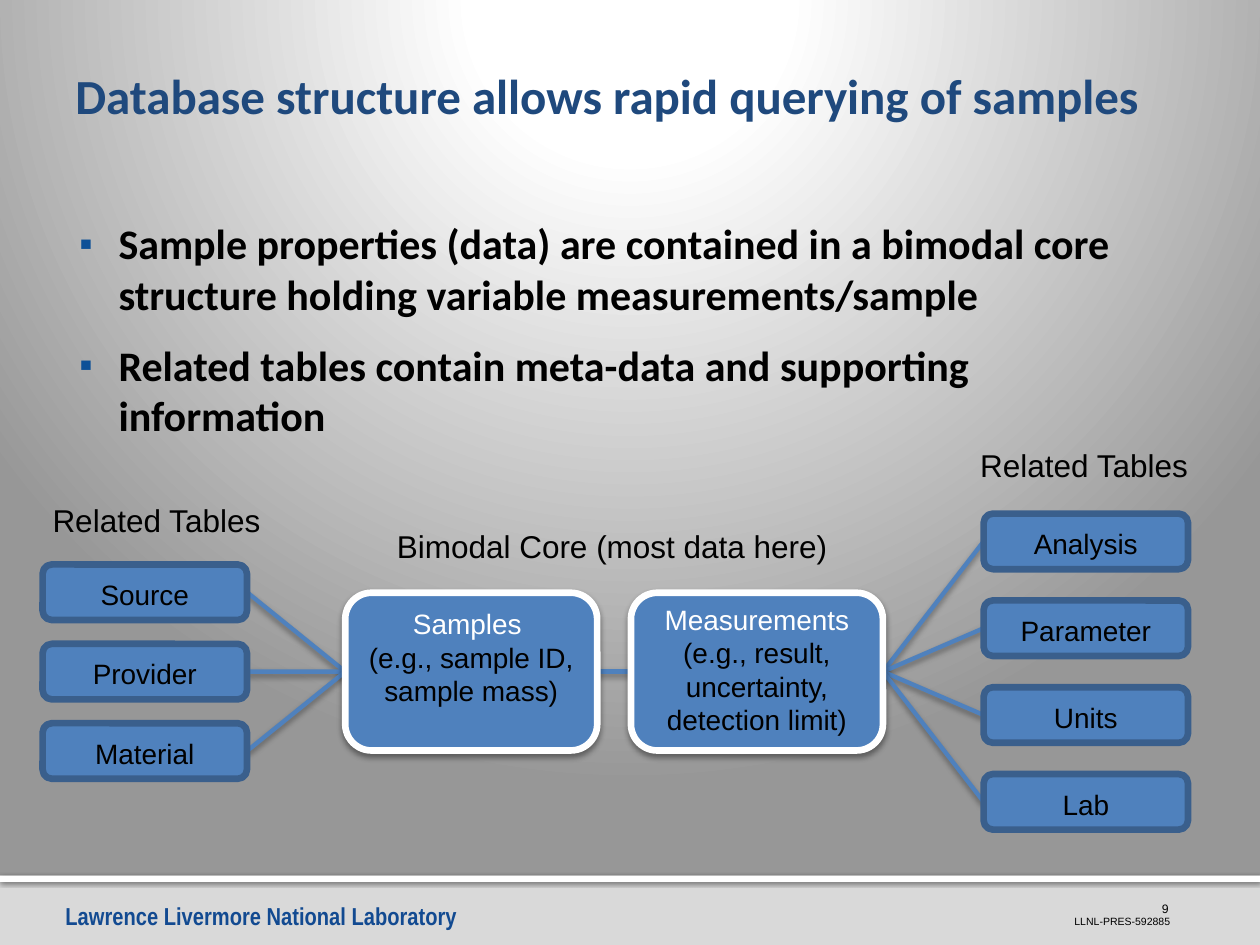
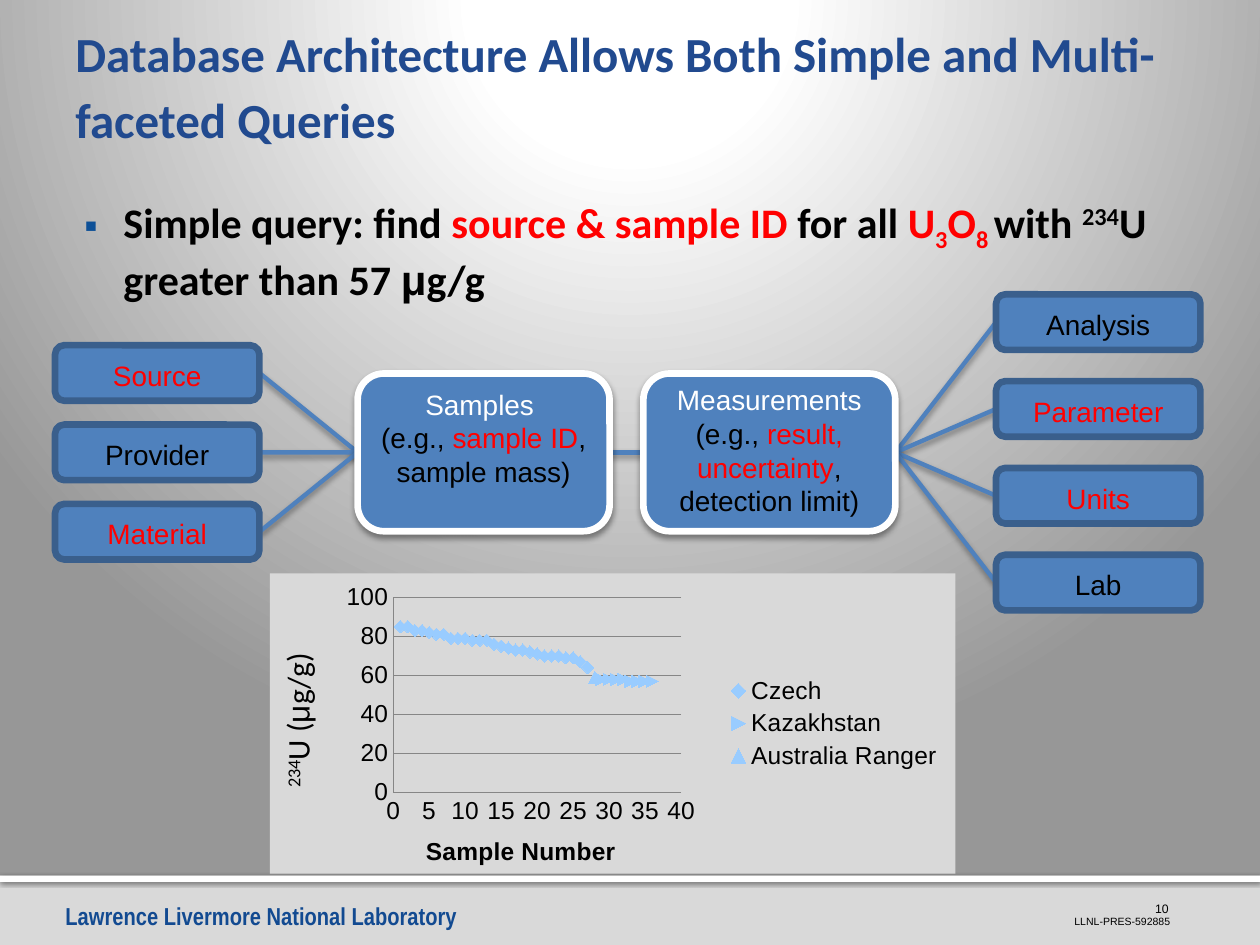
from dataclasses import dataclass
from lxml import etree
from pptx import Presentation
from pptx import util as u
from pptx.chart.data import XyChartData
from pptx.dml.color import RGBColor
from pptx.enum import chart as ch, shapes, text
from pptx.oxml import parse_xml
from pptx.oxml.ns import nsdecls, qn


@dataclass(frozen=True)
class Theme:
    black: str = "000000"
    white: str = "FFFFFF"
    red: str = "FF0000"
    blue: str = "4F81BD"
    blue_edge: str = "3A5F8C"
    navy: str = "1F497D"
    royal: str = "214A8F"
    footer_blue: str = "124A91"
    bullet: str = "0D5097"
    panel: str = "D9D9D9"
    backdrop: str = "979797"
    grid: str = "868686"
    marker: str = "99CCFF"
    body_face: str = "Calibri"
    label_face: str = "Arial"
    footer_face: str = "Arial Narrow"
    title_size: int = 28
    body_size: int = 24
    label_size: int = 18
    node_size: int = 16
    chart_size: int = 14
    footer_size: int = 14
    number_size: int = 7
    code_size: int = 6


@dataclass(frozen=True)
class Span:
    words: str
    color: str = ""
    base: int = 0
    face: str = ""
    size: int = 0


THEME = Theme()
RED = THEME.red
NODE_SIZE = (4.12, 1.12)
CORE_SIZE = (5.08, 3.18)
SAMPLES_OFFSET, MEASURES_OFFSET, RIGHT_OFFSET = 6.1, 11.86, 18.97
LEFT_PITCH, RIGHT_PITCH = 1.6, 1.75
LEFT_TABLES = ("Source", "Provider", "Material")
RIGHT_TABLES = ("Analysis", "Parameter", "Units", "Lab")
CZECH = [85, 85, 83, 83, 82, 81, 81, 79, 79, 79, 78, 78, 78, 76,
         75, 74, 73, 73, 72, 71, 70, 70, 70, 69, 69, 67, 64]
SAMPLE_SERIES = (
    ("Czech", 1, CZECH, ch.XL_MARKER_STYLE.DIAMOND),
    ("Kazakhstan", 29, [58] * 4 + [57] * 4, ch.XL_MARKER_STYLE.DOT),
    ("Australia Ranger", 28, [59], ch.XL_MARKER_STYLE.TRIANGLE),
)


def rgb(color):
    return RGBColor.from_string(color)


def write(para, spans, size, color=THEME.black, face=THEME.label_face, bold=False):
    para.text = spans[0].words
    for span in spans[1:]:
        para.add_run().text = span.words
    for run, span in zip(para.runs, spans):
        run.font.size = u.Pt(span.size or size)
        run.font.name = span.face or face
        run.font.bold = bold
        run.font.color.rgb = rgb(span.color or color)
        if span.base:
            run._r.get_or_add_rPr().set("baseline", str(span.base * 1000))


def add_label(page, place, spans, size, wrap=True, align=None, anchor=None,
              insets=(0.25, 0.13, 0.25, 0.13), **style):
    box = page.shapes.add_textbox(*map(u.Cm, place))
    frame = box.text_frame
    frame.word_wrap = wrap
    frame.vertical_anchor = anchor
    (frame.margin_left, frame.margin_top,
     frame.margin_right, frame.margin_bottom) = map(u.Cm, insets)
    frame.paragraphs[0].alignment = align
    write(frame.paragraphs[0], spans, size, **style)
    return box


def cast_shadow(shape, blur=3.5, distance=2, alpha=38):
    properties = shape.element.spPr
    effects = properties.find(qn("a:effectLst"))
    if effects is None:
        effects = etree.SubElement(properties, qn("a:effectLst"))
    effects.append(parse_xml(
        f'<a:outerShdw {nsdecls("a")} blurRad="{u.Pt(blur)}" dist="{u.Pt(distance)}" '
        f'dir="5400000" rotWithShape="0"><a:srgbClr val="{THEME.black}">'
        f'<a:alpha val="{alpha * 1000}"/></a:srgbClr></a:outerShdw>'))


def add_panel(page, kind, place, fill, edge=None, edge_width=3.8):
    panel = page.shapes.add_shape(kind, *map(u.Cm, place))
    panel.shadow.inherit = False
    panel.fill.solid()
    panel.fill.fore_color.rgb = rgb(fill)
    if edge:
        panel.line.color.rgb = rgb(edge)
        panel.line.width = u.Pt(edge_width)
    else:
        panel.line.fill.background()
    return panel


def add_box(page, place, paragraphs, edge, anchor):
    box = add_panel(page, shapes.MSO_SHAPE.ROUNDED_RECTANGLE, place, THEME.blue, edge)
    frame = box.text_frame
    frame.word_wrap = True
    frame.vertical_anchor = anchor
    for index, spans in enumerate(paragraphs):
        para = frame.add_paragraph() if index else frame.paragraphs[0]
        para.alignment = text.PP_ALIGN.CENTER
        write(para, spans, THEME.node_size)
    return box


def add_core(page, left, middle, paragraphs, anchor):
    width, height = CORE_SIZE
    box = add_box(page, (left, middle - height / 2, width, height),
                  paragraphs, THEME.white, anchor)
    cast_shadow(box)
    return box


def add_table_column(page, left, middle, pitch, names, queried):
    width, height = NODE_SIZE
    top = middle - pitch * (len(names) - 1) / 2 - height / 2
    return [add_box(page, (left, top + row * pitch, width, height),
                    [[Span(name, RED if name in queried else "")]],
                    THEME.blue_edge, text.MSO_ANCHOR.BOTTOM)
            for row, name in enumerate(names)]


def link(page, start, end, behind):
    line = page.shapes.add_connector(shapes.MSO_CONNECTOR.STRAIGHT, 0, 0, 0, 0)
    line.begin_connect(start, 3)
    line.end_connect(end, 1)
    line.line.color.rgb = rgb(THEME.blue)
    line.line.width = u.Pt(2.5)
    cast_shadow(line)
    behind.element.addprevious(line.element)


def add_schema(page, left, middle, sample_spans, measure_spans, queried=()):
    measures = add_core(page, left + MEASURES_OFFSET, middle,
                        [[Span("Measurements ", THEME.white), *measure_spans]],
                        text.MSO_ANCHOR.BOTTOM)
    samples = add_core(page, left + SAMPLES_OFFSET, middle,
                       [[Span("Samples ", THEME.white)], sample_spans],
                       text.MSO_ANCHOR.TOP)
    sources = add_table_column(page, left, middle, LEFT_PITCH, LEFT_TABLES, queried)
    details = add_table_column(page, left + RIGHT_OFFSET, middle, RIGHT_PITCH,
                               RIGHT_TABLES, queried)
    pairs = [(source, samples) for source in sources]
    pairs += [(measures, detail) for detail in details]
    for start, end in pairs + [(samples, measures)]:
        link(page, start, end, measures)


def paint_background(page):
    page.background.fill.solid()
    stops = "".join(f'<a:gs pos="{spot * 1000}"><a:srgbClr val="{color}"/></a:gs>'
                    for spot, color in ((0, THEME.white), (12, THEME.white),
                                        (20, THEME.white), (100, THEME.backdrop)))
    properties = page.element.find(".//" + qn("p:bgPr"))
    properties.replace(properties[0], parse_xml(
        f'<a:gradFill {nsdecls("a")} rotWithShape="1"><a:gsLst>{stops}</a:gsLst>'
        '<a:path path="circle"><a:fillToRect l="10000" t="-25000" r="10000" b="125000"/>'
        '</a:path></a:gradFill>'))


def add_footer(page, number):
    band = add_panel(page, shapes.MSO_SHAPE.RECTANGLE, (0, 17.65, 25.4, 1.4), THEME.panel)
    cast_shadow(band, 3.1)
    rule = add_panel(page, shapes.MSO_SHAPE.RECTANGLE, (0, 17.65, 25.4, 0.13), THEME.white)
    cast_shadow(rule, 2.5, 0.8, 60)
    add_label(page, (1.07, 18.03, 9.2, 0.86), [Span("Lawrence Livermore National Laboratory")],
              THEME.footer_size, color=THEME.footer_blue, face=THEME.footer_face, bold=True)
    right = text.PP_ALIGN.RIGHT
    add_label(page, (21.64, 18.31, 2.2, 0.38), [Span("LLNL-PRES-592885")], THEME.code_size,
              wrap=False, align=right, anchor=text.MSO_ANCHOR.BOTTOM,
              insets=(0, 0.13, 0.25, 0))
    add_label(page, (22.81, 18.03, 1, 0.43), [Span(str(number))], THEME.number_size, align=right)


def add_page(deck, number, title_spans, title_top, title_color):
    page = deck.slides.add_slide(deck.slide_layouts[6])
    paint_background(page)
    add_footer(page, number)
    add_label(page, (1.27, title_top, 22.86, 3.48), title_spans, THEME.title_size,
              anchor=text.MSO_ANCHOR.MIDDLE, insets=(0.25, 0.13, 0.13, 0.13),
              color=title_color, face=THEME.body_face, bold=True)
    return page


def set_bullet(para):
    properties = para._p.get_or_add_pPr()
    properties.set("marL", str(u.Cm(1.12)))
    properties.set("indent", str(u.Cm(-0.79)))
    for tag in (f'buClr {nsdecls("a")}><a:srgbClr val="{THEME.bullet}"/></a:buClr>',
                f'buSzPct {nsdecls("a")} val="90000"/>',
                f'buFont {nsdecls("a")} typeface="{THEME.label_face}"/>',
                f'buChar {nsdecls("a")} char="▪"/>'):
        properties.append(parse_xml("<a:" + tag))


def add_bullets(page, place, items):
    style = dict(size=THEME.body_size, face=THEME.body_face, bold=True)
    box = add_label(page, place, items[0], insets=(0.15, 0.25, 0.25, 0.13), **style)
    for spans in items[1:]:
        para = box.text_frame.add_paragraph()
        para.space_before = u.Pt(6)
        write(para, spans, **style)
    for para in box.text_frame.paragraphs:
        para.space_after = u.Pt(6)
        set_bullet(para)


def style_axis(axis, top, step):
    axis.minimum_scale, axis.maximum_scale, axis.major_unit = 0, top, step
    axis.major_tick_mark = axis.minor_tick_mark = ch.XL_TICK_MARK.NONE
    axis.has_major_gridlines = False
    axis.format.line.color.rgb = rgb(THEME.grid)


def lay_out_chart(chart):
    space = chart._chartSpace
    space.find(qn("c:chart")).addnext(parse_xml(
        f'<c:spPr {nsdecls("c", "a")}><a:solidFill><a:srgbClr val="{THEME.panel}"/>'
        '</a:solidFill><a:ln><a:noFill/></a:ln></c:spPr>'))
    plot = space.find(".//" + qn("c:plotArea"))
    for layout in plot.findall(qn("c:layout")):
        plot.remove(layout)
    sizes = "".join(f'<c:{tag} val="{value}"/>' for tag, value in
                    (("x", 0.18), ("y", 0.08), ("w", 0.42), ("h", 0.65)))
    plot.insert(0, parse_xml(
        f'<c:layout {nsdecls("c")}><c:manualLayout><c:layoutTarget val="inner"/>'
        f'<c:xMode val="edge"/><c:yMode val="edge"/>{sizes}</c:manualLayout></c:layout>'))


def add_sample_chart(page, place):
    data = XyChartData()
    for name, first, values, _ in SAMPLE_SERIES:
        series = data.add_series(name)
        for sample, value in enumerate(values, first):
            series.add_data_point(sample, value)
    chart = page.shapes.add_chart(ch.XL_CHART_TYPE.XY_SCATTER, *map(u.Cm, place), data).chart
    chart.font.size = u.Pt(THEME.chart_size)
    chart.font.name = THEME.label_face
    chart.font.color.rgb = rgb(THEME.black)
    chart.has_title = False
    chart.has_legend = True
    chart.legend.position = ch.XL_LEGEND_POSITION.RIGHT
    chart.legend.include_in_layout = False
    chart.plots[0].vary_by_categories = False
    style_axis(chart.category_axis, 40, 5)
    style_axis(chart.value_axis, 100, 20)
    chart.value_axis.has_major_gridlines = True
    chart.value_axis.major_gridlines.format.line.color.rgb = rgb(THEME.grid)
    write(chart.category_axis.axis_title.text_frame.paragraphs[0],
          [Span("Sample Number")], THEME.chart_size, bold=True)
    for series, (_, _, _, symbol) in zip(chart.plots[0].series, SAMPLE_SERIES):
        series.smooth = False
        series.format.line.fill.background()
        series.marker.style = symbol
        series.marker.size = 7
        series.marker.format.fill.solid()
        series.marker.format.fill.fore_color.rgb = rgb(THEME.marker)
        series.marker.format.line.fill.background()
    lay_out_chart(chart)


def main():
    deck = Presentation()
    deck.slide_width, deck.slide_height = u.Cm(25.4), u.Cm(19.05)

    page = add_page(deck, 9, [Span("Database structure allows rapid querying of samples")],
                    0.18, THEME.navy)
    add_bullets(page, (1.12, 4.14, 22.86, 5.03), [
        [Span("Sample properties (data) are contained in a bimodal core structure "
              "holding variable measurements/sample")],
        [Span("Related tables contain meta-data and supporting information")]])
    add_schema(page, 0.86, 13.54, [Span("(e.g., sample ID, sample mass)")],
               [Span("(e.g., result, uncertainty, detection limit)")])
    for left, top, width, caption in ((0.81, 9.98, 4.75, "Related Tables"),
                                      (19.51, 8.86, 4.75, "Related Tables"),
                                      (7.75, 10.49, 9.27, "Bimodal Core (most data here)")):
        add_label(page, (left, top, width, 1.02), [Span(caption)], THEME.label_size, wrap=False)

    page = add_page(deck, 10, [Span("Database Architecture Allows Both Simple and "
                                    "Multi-faceted Queries"), Span(" ", size=32)],
                    0, THEME.royal)
    add_sample_chart(page, (5.44, 11.56, 13.82, 6.05))
    mu = Span("μ", face=THEME.label_face)
    add_bullets(page, (1.22, 3.71, 22.86, 4.09), [[
        Span("Simple query: find "), Span("source & sample ID ", RED), Span("for all "),
        Span("U", RED), Span("3", RED, -25), Span("O", RED), Span("8 ", RED, -25),
        Span("with "), Span("234", base=30), Span("U greater than 57 "), mu, Span("g/g")]])
    add_schema(page, 1.11, 9.12,
               [Span("(e.g., "), Span("sample ID", RED), Span(", sample mass)")],
               [Span("(e.g., "), Span("result, uncertainty", RED), Span(", detection limit)")],
               ("Source", "Material", "Parameter", "Units"))
    unit = add_label(page, (4.34, 13.97, 3.3, 1.02),
                     [Span("234", base=30), Span("U ("), mu, Span("g/g)")],
                     THEME.label_size, wrap=False, face=THEME.body_face)
    unit.rotation = 270

    deck.save("out.pptx")


if __name__ == "__main__":
    main()
